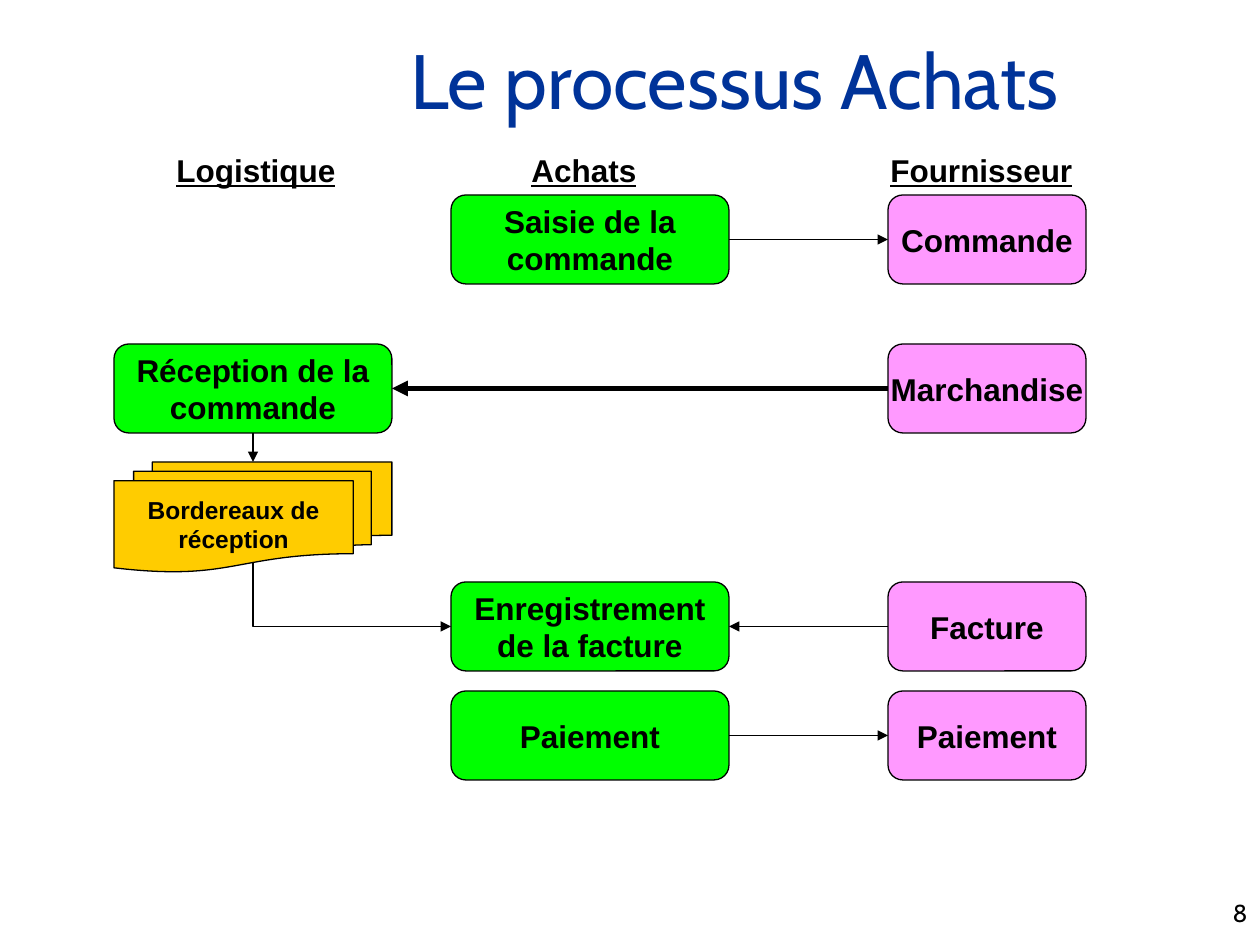
from pptx import Presentation
from pptx.dml.color import RGBColor
from pptx.enum.shapes import MSO_CONNECTOR, MSO_SHAPE
from pptx.enum.text import MSO_ANCHOR, PP_ALIGN
from pptx.oxml.ns import qn
from pptx.util import Pt
from lxml import etree

STRAIGHT, ELBOW = MSO_CONNECTOR.STRAIGHT, MSO_CONNECTOR.ELBOW
ROUNDED, DOCUMENTS = MSO_SHAPE.ROUNDED_RECTANGLE, MSO_SHAPE.FLOWCHART_MULTIDOCUMENT
TOP, MIDDLE = MSO_ANCHOR.TOP, MSO_ANCHOR.MIDDLE
LEFT, CENTER, RIGHT = PP_ALIGN.LEFT, PP_ALIGN.CENTER, PP_ALIGN.RIGHT
SIDE_LEFT, SIDE_BOTTOM, SIDE_RIGHT = 1, 2, 3

COLORS = {
    "title": "003399",
    "ink": "000000",
    "internal": "00FF00",
    "supplier": "FF99FF",
    "document": "FFCC00",
}
STEP_HEIGHT = 89
LOGISTICS, PURCHASING, SUPPLIER = (0, 278), (337, 278), (774, 198)
ORDER, DELIVERY, INVOICE, PAYMENT = 0, 149, 387, 496


def px(length):
    return round(length * 914400 / 126)


def rgb(name):
    return RGBColor.from_string(COLORS[name])


def write(shape, text, size, font="Arial", color="ink", align=CENTER,
          anchor=MIDDLE, wrap=True, bold=False, underline=False):
    frame = shape.text_frame
    frame.text = text
    frame.word_wrap = wrap
    frame.vertical_anchor = anchor
    paragraph = frame.paragraphs[0]
    paragraph.alignment = align
    run_font = paragraph.runs[0].font
    run_font.name = font
    run_font.size = Pt(size)
    run_font.bold = bold
    run_font.underline = underline
    run_font.color.rgb = rgb(color)


def add_label(slide, box, text, size, **style):
    label = slide.shapes.add_textbox(*map(px, box))
    write(label, text, size, **style)


def add_step(slide, preset, box, text, fill, size=18, wrap=True):
    step = slide.shapes.add_shape(preset, *map(px, box))
    step.shadow.inherit = False
    step.fill.solid()
    step.fill.fore_color.rgb = rgb(fill)
    step.line.color.rgb = rgb("ink")
    step.line.width = Pt(0.75)
    write(step, text, size, wrap=wrap, bold=True)
    return step


def add_arrow(slide, kind, start, end, width=0.75):
    arrow = slide.shapes.add_connector(kind, *map(px, start + end))
    arrow.line.color.rgb = rgb("ink")
    arrow.line.width = Pt(width)
    etree.SubElement(arrow.line._get_or_add_ln(), qn("a:tailEnd"), type="triangle")
    etree.SubElement(arrow._element.spPr, qn("a:effectLst"))
    return arrow


def join(slide, source, source_side, target, target_side, width=0.75):
    arrow = add_arrow(slide, STRAIGHT, (0, 0), (0, 0), width)
    arrow.begin_connect(source, source_side)
    arrow.end_connect(target, target_side)


def add_down_then_right(slide, start, end):
    across, down = end[0] - start[0], end[1] - start[1]
    left = (start[0] + end[0] - down) / 2
    top = (start[1] + end[1] - across) / 2
    arrow = add_arrow(slide, ELBOW, (left, top), (left + down, top + across))
    properties = arrow._element.spPr
    properties.find(qn("a:prstGeom")).set("prst", "bentConnector2")
    transform = properties.find(qn("a:xfrm"))
    transform.set("rot", "16200000")
    transform.set("flipH", "1")


def add_headings(slide, left, top):
    headings = [("Logistique", 50, 185), ("Achats", 405, 130), ("Fournisseur", 764, 218)]
    for text, offset, width in headings:
        add_label(slide, (left + offset, top, width, 50), text, 18,
                  align=LEFT, anchor=TOP, wrap=False, bold=True, underline=True)


def add_process(slide, left, top):
    def place(text, column, row):
        offset, width = column
        supplied = column == SUPPLIER
        box = (left + offset, top + row, width, STEP_HEIGHT)
        return add_step(slide, ROUNDED, box, text,
                        "supplier" if supplied else "internal", wrap=not supplied)

    order_entry = place("Saisie de la commande", PURCHASING, ORDER)
    order = place("Commande", SUPPLIER, ORDER)
    reception = place("Réception de la commande", LOGISTICS, DELIVERY)
    goods = place("Marchandise", SUPPLIER, DELIVERY)
    invoice_entry = place("Enregistrement de la facture", PURCHASING, INVOICE)
    invoice = place("Facture", SUPPLIER, INVOICE)
    payment = place("Paiement", PURCHASING, PAYMENT)
    payment_received = place("Paiement", SUPPLIER, PAYMENT)
    add_step(slide, DOCUMENTS, (left, top + 267, 278, 110),
             "Bordereaux de réception", "document", size=14)

    join(slide, order_entry, SIDE_RIGHT, order, SIDE_LEFT)
    join(slide, goods, SIDE_LEFT, reception, SIDE_RIGHT, width=3)
    join(slide, invoice, SIDE_LEFT, invoice_entry, SIDE_RIGHT)
    join(slide, payment, SIDE_RIGHT, payment_received, SIDE_LEFT)

    center = left + LOGISTICS[1] / 2
    to_documents = add_arrow(slide, STRAIGHT, (center, top + DELIVERY + STEP_HEIGHT),
                             (center, top + 267))
    to_documents.begin_connect(reception, SIDE_BOTTOM)
    add_down_then_right(slide, (center, top + 368),
                        (left + PURCHASING[0], top + INVOICE + STEP_HEIGHT / 2))


def main():
    presentation = Presentation()
    presentation.slide_width = px(1260)
    presentation.slide_height = px(945)
    slide = presentation.slides.add_slide(presentation.slide_layouts[6])
    add_label(slide, (0, 0, 1071, 158), "Le processus Achats", 44,
              font="Cabin", color="title", align=RIGHT)
    add_headings(slide, 114, 145)
    add_process(slide, 114, 195)
    add_label(slide, (998, 892, 262, 32), "8", 14,
              font="Cabin", align=RIGHT, anchor=TOP)
    presentation.save("out.pptx")


if __name__ == "__main__":
    main()
